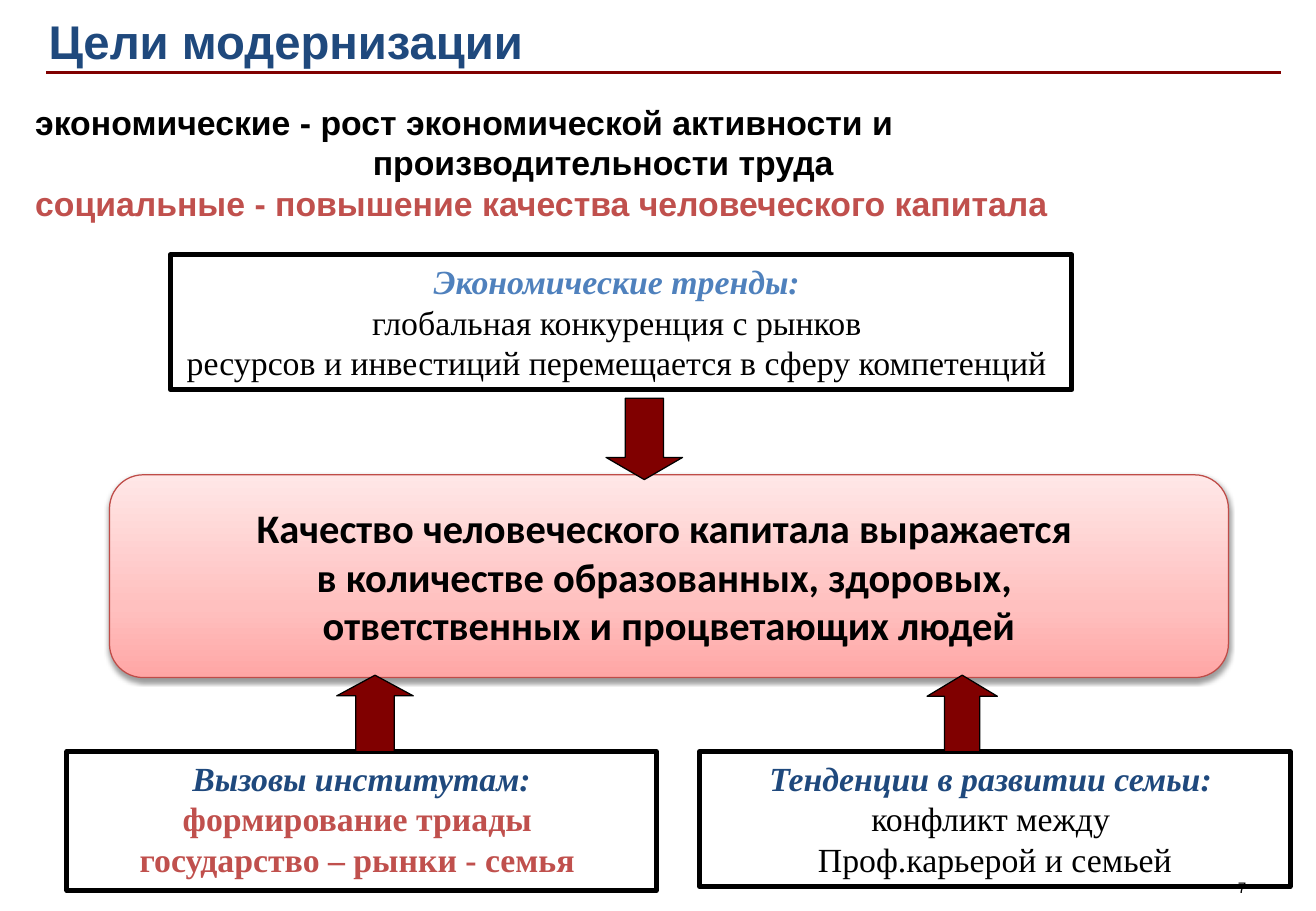
import copy
import dataclasses

import lxml.etree
import pptx
import pptx.dml.color
import pptx.enum.shapes
import pptx.enum.text
import pptx.oxml.ns
import pptx.util

Cm, Pt = pptx.util.Cm, pptx.util.Pt
qn = pptx.oxml.ns.qn
SHAPE = pptx.enum.shapes.MSO_SHAPE
ALIGN = pptx.enum.text.PP_ALIGN
ANCHOR = pptx.enum.text.MSO_ANCHOR


@dataclasses.dataclass(frozen=True)
class Theme:
    black: str = "000000"
    white: str = "FFFFFF"
    navy: str = "1F497D"
    blue: str = "4F81BD"
    red: str = "C0504D"
    maroon: str = "800000"
    panel_line: str = "BF4C48"
    panel_stops: tuple = ((0, "FFA6A5"), (0.35, "FFC0BF"), (1, "FFE7E7"))
    sans: str = "Arial"
    serif: str = "Times New Roman"
    panel_font: str = "Calibri"
    title_size: int = 28
    panel_size: int = 24
    text_size: int = 20
    number_size: int = 9


T = Theme()


@dataclasses.dataclass(frozen=True)
class Box:
    left: float
    top: float
    width: float
    height: float

    def emu(self):
        return Cm(self.left), Cm(self.top), Cm(self.width), Cm(self.height)


def rgb(color):
    return pptx.dml.color.RGBColor.from_string(color)


def move(sp, box):
    sp.left, sp.top, sp.width, sp.height = box.emu()


def write(p, text, font, size, color, bold=False, italic=False):
    r = p.add_run()
    r.text = text
    r.font.name, r.font.size = font, Pt(size)
    r.font.bold, r.font.italic = bold, italic
    r.font.color.rgb = rgb(color)


def paragraphs(tf, count):
    return [tf.paragraphs[0]] + [tf.add_paragraph() for _ in range(count - 1)]


def add_shape(s, kind, box, line, width, fill=None):
    sp = s.shapes.add_shape(kind, *box.emu())
    sp.shadow.inherit = False
    sp.line.color.rgb, sp.line.width = rgb(line), Pt(width)
    if fill:
        sp.fill.solid()
        sp.fill.fore_color.rgb = rgb(fill)
    else:
        sp.fill.background()
    return sp


def add_header(s, box, title):
    sp = s.shapes.title
    move(sp, box)
    tf = sp.text_frame
    tf.vertical_anchor = ANCHOR.BOTTOM
    tf.auto_size = pptx.enum.text.MSO_AUTO_SIZE.NONE
    p = tf.paragraphs[0]
    p.alignment = ALIGN.LEFT
    write(p, title, T.sans, T.title_size, T.navy, bold=True)

    y = Cm(box.top + box.height - 0.05)
    rule = s.shapes.add_connector(
        pptx.enum.shapes.MSO_CONNECTOR.STRAIGHT,
        Cm(box.left + 0.21), y, Cm(box.left + box.width), y)
    rule.line.color.rgb, rule.line.width = rgb(T.maroon), Pt(1.5)
    lxml.etree.SubElement(rule._element.spPr, qn("a:effectLst"))


def add_goals(s, box, goals):
    sp = s.placeholders[1]
    move(sp, box)
    tf = sp.text_frame
    tf.auto_size = pptx.enum.text.MSO_AUTO_SIZE.NONE
    for p, (text, color, indent) in zip(paragraphs(tf, len(goals)), goals):
        p.alignment = ALIGN.LEFT
        p.space_before = Pt(0)
        pPr = p._p.get_or_add_pPr()
        pPr.set("marL", str(Cm(indent)))
        pPr.set("indent", "0")
        lxml.etree.SubElement(pPr, qn("a:buNone"))
        write(p, text, T.sans, T.text_size, color, bold=True)


def add_panel(s, box, lines):
    sp = add_shape(s, SHAPE.ROUNDED_RECTANGLE, box, T.panel_line, 0.75)
    sp.fill.gradient()
    sp.fill.gradient_angle = 90
    stops = sp._element.spPr.find(".//" + qn("a:gsLst"))
    stops.append(copy.deepcopy(stops[0]))
    for stop, (position, color) in zip(sp.fill.gradient_stops, T.panel_stops):
        stop.position = position
        stop.color.rgb = rgb(color)

    effects = sp._element.spPr.find(qn("a:effectLst"))
    shadow = lxml.etree.SubElement(
        effects, qn("a:outerShdw"), blurRad=str(Pt(3.1)), dist=str(Pt(1.6)),
        dir="5400000", rotWithShape="0")
    tone = lxml.etree.SubElement(shadow, qn("a:srgbClr"), val=T.black)
    lxml.etree.SubElement(tone, qn("a:alpha"), val="38000")

    tf = sp.text_frame
    tf.word_wrap = False
    tf.vertical_anchor = ANCHOR.MIDDLE
    for p, text in zip(paragraphs(tf, len(lines)), lines):
        p.alignment = ALIGN.CENTER
        write(p, text, T.panel_font, T.panel_size, T.black, bold=True)


def add_factor(s, box, heading, heading_color, lines, color=T.black, bold=False, wrap=True):
    sp = add_shape(s, SHAPE.RECTANGLE, box, T.black, 3, T.white)
    tf = sp.text_frame
    tf.word_wrap = wrap
    tf.vertical_anchor = ANCHOR.TOP
    first, *rest = paragraphs(tf, len(lines) + 1)
    first.alignment = ALIGN.CENTER
    write(first, heading, T.serif, T.text_size, heading_color, bold=True, italic=True)
    for p, text in zip(rest, lines):
        p.alignment = ALIGN.CENTER
        write(p, text, T.serif, T.text_size, color, bold=bold)


def add_arrow(s, kind, box, head):
    sp = add_shape(s, kind, box, T.black, 0.75, T.maroon)
    sp.adjustments[0], sp.adjustments[1] = 0.5, head


def add_number(s, box, number):
    tf = s.shapes.add_textbox(*box.emu()).text_frame
    tf.word_wrap = True
    tf.margin_left = tf.margin_right = tf.margin_top = tf.margin_bottom = 0
    write(tf.paragraphs[0], number, T.sans, T.number_size, T.black)


def main():
    prs = pptx.Presentation()
    prs.slide_width, prs.slide_height = Cm(27.51), Cm(19.05)
    s = prs.slides.add_slide(prs.slide_layouts[1])

    add_header(s, Box(0.76, 0, 26.01, 1.57), "Цели модернизации")
    add_goals(s, Box(0.48, 2, 26.77, 2.72), [
        ("экономические - рост экономической активности и", T.black, 0),
        ("производительности труда", T.black, 7.06),
        ("социальные - повышение качества человеческого капитала", T.red, 0),
    ])
    add_panel(s, Box(2.29, 9.93, 23.39, 4.24), [
        "Качество человеческого капитала выражается ",
        "в количестве образованных, здоровых, ",
        "ответственных и процветающих людей",
    ])
    add_factor(s, Box(3.56, 5.33, 18.85, 2.82), "Экономические тренды: ", T.blue, [
        "глобальная конкуренция с рынков ",
        "ресурсов и инвестиций перемещается в сферу компетенций ",
    ], wrap=False)
    add_factor(s, Box(14.63, 15.72, 12.34, 2.82), "Тенденции в развитии семьи: ", T.navy, [
        "конфликт между ",
        "Проф.карьерой и семьей",
    ])
    add_factor(s, Box(1.4, 15.72, 12.32, 2.9), "Вызовы институтам:", T.navy, [
        "формирование триады ",
        "государство – рынки - семья ",
    ], color=T.red, bold=True)
    add_arrow(s, SHAPE.DOWN_ARROW, Box(12.67, 8.33, 1.6, 1.7), 0.29)
    add_arrow(s, SHAPE.UP_ARROW, Box(7.04, 14.12, 1.6, 1.6), 0.27)
    add_arrow(s, SHAPE.UP_ARROW, Box(19.38, 14.12, 1.47, 1.6), 0.3)
    add_number(s, Box(25.88, 18.36, 0.51, 0.38), "7")
    prs.save("out.pptx")


if __name__ == "__main__":
    main()
